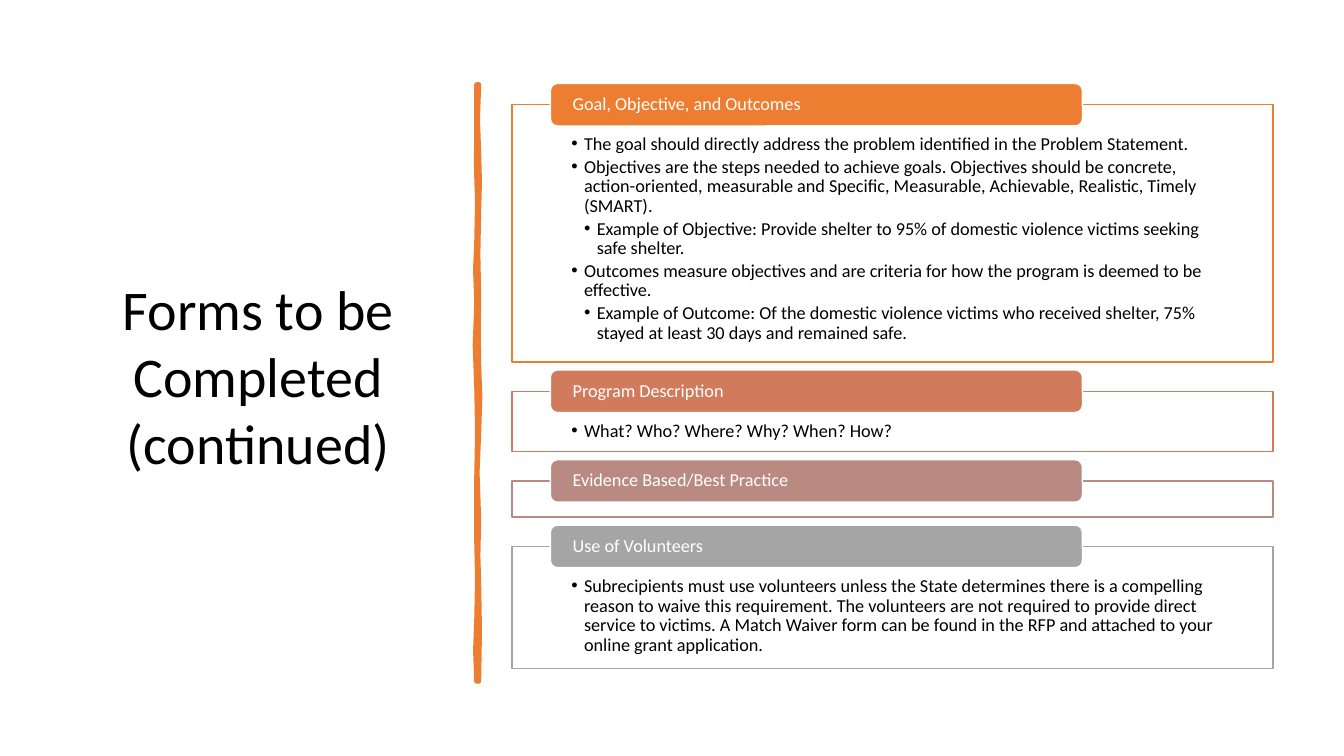
from lxml.etree import SubElement
from pptx import Presentation
from pptx.dml.color import RGBColor
from pptx.enum.shapes import MSO_SHAPE
from pptx.enum.text import MSO_ANCHOR, MSO_AUTO_SIZE, PP_ALIGN
from pptx.oxml.ns import qn
from pptx.util import Cm, Pt

ORANGE = RGBColor(0xED, 0x7D, 0x31)
TERRACOTTA = RGBColor(0xD1, 0x7B, 0x5C)
ROSE = RGBColor(0xB9, 0x8A, 0x82)
GRAY = RGBColor(0xA5, 0xA5, 0xA5)
WHITE = RGBColor(0xFF, 0xFF, 0xFF)
BLACK = RGBColor(0x00, 0x00, 0x00)

PANEL_LEFT, PANEL_WIDTH, PANEL_GAP = 12.9, 19.18, 0.74
FIRST_PANEL_TOP = 2.64
HEADER_LEFT, HEADER_WIDTH, HEADER_HEIGHT = 13.87, 13.41, 1.07
HANGING_INDENT = 0.32

RULE_RIGHT = [
    (12.07, 2.13), (12.04, 3.0), (12.07, 3.86), (12.09, 4.6), (12.07, 5.28),
    (12.05, 6.4), (12.07, 7.47), (12.06, 8.3), (12.07, 9.19), (12.1, 10.0),
    (12.07, 10.92), (12.03, 11.9), (12.07, 13.11), (12.05, 14.0),
    (12.07, 14.68), (12.09, 15.9), (12.07, 17.17),
]
RULE_LEFT = [
    (12.01, 17.17), (11.98, 16.4), (12.01, 15.57), (12.03, 14.6),
    (12.01, 13.69), (12.01, 12.8), (12.01, 11.96), (12.03, 10.9),
    (12.01, 9.8), (11.97, 8.7), (12.01, 7.62), (11.98, 6.8), (12.01, 6.05),
    (12.03, 5.1), (12.0, 4.17), (12.01, 3.1), (12.01, 2.13),
]

PANELS = [
    ("Goal, Objective, and Outcomes", ORANGE, 6.48, [
        (0, "The goal should directly address the problem identified in the Problem Statement."),
        (0, "Objectives are the steps needed to achieve goals. Objectives should be concrete, "
            "action-oriented, measurable and Specific, Measurable, Achievable, Realistic, "
            "Timely (SMART)."),
        (1, "Example of Objective: Provide shelter to 95% of domestic violence victims seeking "
            "safe shelter."),
        (0, "Outcomes measure objectives and are criteria for how the program is deemed to be "
            "effective."),
        (1, "Example of Outcome: Of the domestic violence victims who received shelter, 75% "
            "stayed at least 30 days and remained safe."),
    ]),
    ("Program Description", TERRACOTTA, 1.52, [
        (0, "What? Who? Where? Why? When? How?"),
    ]),
    ("Evidence Based/Best Practice", ROSE, 0.91, []),
    ("Use of Volunteers", GRAY, 3.07, [
        (0, "Subrecipients must use volunteers unless the State determines there is a compelling "
            "reason to waive this requirement. The volunteers are not required to provide direct "
            "service to victims. A Match Waiver form can be found in the RFP and attached to your "
            "online grant application."),
    ]),
]


class SlideBuilder:
    """Hold the text style and the current slide, and draw its elements."""

    def __init__(self, slide, font_name="Calibri", text_size=13):
        self.slide = slide
        self.font_name = font_name
        self.text_size = text_size
        self.bodies = [p for p in slide.placeholders if p.placeholder_format.idx > 0]

    def place(self, shape, left, top, width, height):
        shape.left, shape.top = Cm(left), Cm(top)
        shape.width, shape.height = Cm(width), Cm(height)

    def frame(self, shape, anchor, horizontal, top, bottom):
        text_frame = shape.text_frame
        text_frame.word_wrap = True
        text_frame.auto_size = MSO_AUTO_SIZE.NONE
        text_frame.vertical_anchor = anchor
        text_frame.margin_left = text_frame.margin_right = Cm(horizontal)
        text_frame.margin_top, text_frame.margin_bottom = Cm(top), Cm(bottom)
        return text_frame

    def format(self, paragraph, color, size, alignment=PP_ALIGN.LEFT, spacing=0.9, after=0):
        paragraph.alignment = alignment
        paragraph.line_spacing = spacing
        paragraph.space_before, paragraph.space_after = Pt(0), Pt(after)
        for run in paragraph.runs:
            run.font.name = self.font_name
            run.font.size = Pt(size)
            run.font.bold = False
            run.font.color.rgb = color

    def title(self, text, left, top, width, height):
        title = self.slide.shapes.title
        self.place(title, left, top, width, height)
        text_frame = self.frame(title, MSO_ANCHOR.TOP, 0.25, 0.13, 0.13)
        text_frame.text = text
        self.format(text_frame.paragraphs[0], BLACK, 40, PP_ALIGN.CENTER, 1.0)

    def rule(self, points, color):
        corners = [(Cm(x), Cm(y)) for x, y in points]
        builder = self.slide.shapes.build_freeform(*corners[0], scale=1.0)
        builder.add_line_segments(corners[1:], close=True)
        self.paint(builder.convert_to_shape(), color, color, 3.25)

    def paint(self, shape, fill, line, line_width=1):
        shape.shadow.inherit = False
        shape.fill.solid()
        shape.fill.fore_color.rgb = fill
        shape.line.color.rgb = line
        shape.line.width = Pt(line_width)

    def box(self, kind, fill, line, left, top, width, height):
        shape = self.slide.shapes.add_shape(kind, Cm(left), Cm(top), Cm(width), Cm(height))
        self.paint(shape, fill, line)
        return shape

    def bullets(self, items, left, top, width, height):
        body = self.bodies.pop(0)
        self.place(body, left, top, width, height)
        body.element.getparent().append(body.element)
        text_frame = self.frame(body, MSO_ANCHOR.TOP, 1.5, 0.76, 0.25)
        text_frame.text = "\n".join(text for _, text in items)
        for paragraph, (level, _) in zip(text_frame.paragraphs, items):
            paragraph.level = level
            self.format(paragraph, BLACK, self.text_size, after=2)
            properties = paragraph._p.get_or_add_pPr()
            properties.set("marL", str(Cm(HANGING_INDENT * (level + 1))))
            properties.set("indent", str(-Cm(HANGING_INDENT)))
            SubElement(properties, qn("a:buFont"), typeface="Arial")
            SubElement(properties, qn("a:buChar"), char="•")

    def panel(self, heading, color, top, height, items):
        area = (PANEL_LEFT, top, PANEL_WIDTH, height)
        outline = self.box(MSO_SHAPE.RECTANGLE, WHITE, color, *area)
        fill_color = outline.element.spPr.find(qn("a:solidFill"))[0]
        SubElement(fill_color, qn("a:alpha"), val="90000")
        if items:
            self.bullets(items, *area)
        header = self.box(MSO_SHAPE.ROUNDED_RECTANGLE, color, WHITE, HEADER_LEFT,
                          top - HEADER_HEIGHT / 2, HEADER_WIDTH, HEADER_HEIGHT)
        text_frame = self.frame(header, MSO_ANCHOR.MIDDLE, 0.51, 0, 0)
        text_frame.text = heading
        self.format(text_frame.paragraphs[0], WHITE, self.text_size)

    def remove_unused(self):
        for body in self.bodies:
            body.element.getparent().remove(body.element)


def main():
    presentation = Presentation()
    presentation.slide_width, presentation.slide_height = Cm(33.87), Cm(19.05)
    comparison_layout = presentation.slide_layouts[4]
    builder = SlideBuilder(presentation.slides.add_slide(comparison_layout))
    builder.title("Forms to be Completed (continued)", 1.78, 6.78, 9.45, 5.38)
    builder.rule(RULE_RIGHT + RULE_LEFT, ORANGE)
    top = FIRST_PANEL_TOP
    for heading, color, height, items in PANELS:
        builder.panel(heading, color, top, height, items)
        top += height + PANEL_GAP
    builder.remove_unused()
    presentation.save("out.pptx")


if __name__ == "__main__":
    main()
